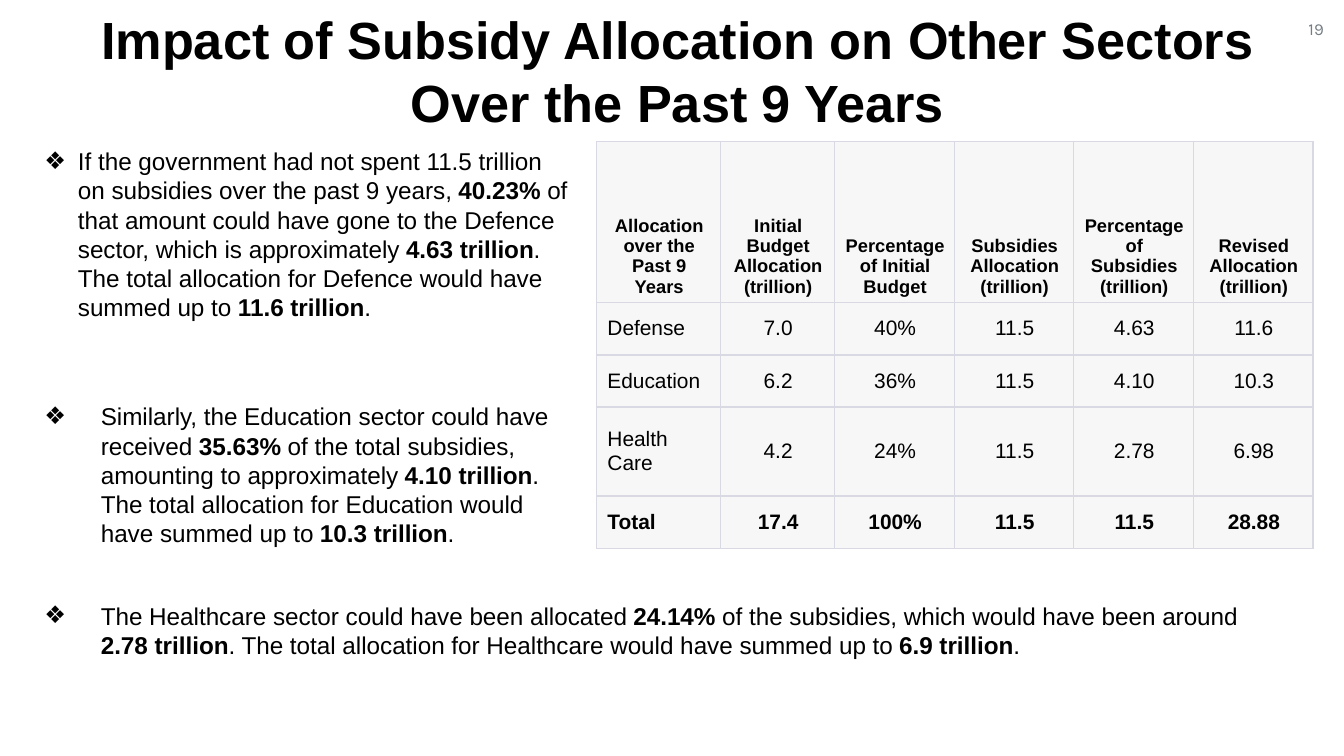
from pptx import Presentation
from pptx.dml.color import RGBColor
from pptx.enum.text import MSO_ANCHOR, MSO_AUTO_SIZE, PP_ALIGN
from pptx.oxml import parse_xml
from pptx.oxml.ns import nsdecls
from pptx.util import Inches, Pt

LEFT, CENTER, RIGHT = PP_ALIGN.LEFT, PP_ALIGN.CENTER, PP_ALIGN.RIGHT
TOP, MIDDLE, BOTTOM = MSO_ANCHOR.TOP, MSO_ANCHOR.MIDDLE, MSO_ANCHOR.BOTTOM
NO_AUTOFIT = MSO_AUTO_SIZE.NONE

THEME = {
    "ink": "000000", "page_number": "767E85", "cell": "F7F7F8", "grid": "D9D9E3",
    "font": "Arial", "page_font": "Karla",
    "title_size": 28, "body_size": 13, "header_size": 9.8, "cell_size": 11.2, "page_size": 9,
}


def add_text(paragraph, text, size, bold=False, font="font", color="ink"):
    run = paragraph.add_run()
    run.text = text
    formats = {"name": THEME[font], "size": Pt(THEME[size]), "bold": bold}
    for attribute, value in formats.items():
        setattr(run.font, attribute, value)
    run.font.color.rgb = RGBColor.from_string(THEME[color])


def add_bullet(paragraph, text, indent, space_before):
    """Fill a diamond-bulleted paragraph; every second part between asterisks is bold."""
    properties = paragraph._p.get_or_add_pPr()
    properties.set("marL", str(Inches(indent)))
    properties.set("indent", str(-Inches(indent)))
    for tag in (f'<a:buClr {nsdecls("a")}><a:srgbClr val="{THEME["ink"]}"/></a:buClr>',
                f'<a:buFont {nsdecls("a")} typeface="{THEME["font"]}"/>',
                f'<a:buChar {nsdecls("a")} char="❖"/>'):
        properties.append(parse_xml(tag))
    paragraph.alignment = LEFT
    paragraph.line_spacing = 1.0
    paragraph.space_before = Pt(space_before)
    for index, part in enumerate(text.split("*")):
        add_text(paragraph, part, "body_size", bold=index % 2 == 1)


prs = Presentation()
prs.slide_width, prs.slide_height = Inches(10), Inches(10 * 9 / 16)
slide = prs.slides.add_slide(prs.slide_layouts[3])
title, sector_points, healthcare_point = slide.placeholders
page_number = slide.shapes.add_textbox(0, 0, 0, 0)

# Text areas: left, top, width, height, anchor
areas = [
    (title, 0.23, 0, 9.62, 1.04, MIDDLE),
    (sector_points, 0.23, 1.04, 4.14, 3.11, TOP),
    (healthcare_point, 0.23, 4.42, 9.33, 0.54, TOP),
    (page_number, 9.25, 0.14, 0.6, 0.43, TOP),
]
for area, left, top, width, height, anchor in areas:
    box = {"left": left, "top": top, "width": width, "height": height}
    for attribute, value in box.items():
        setattr(area, attribute, Inches(value))
    frame = area.text_frame
    frame.word_wrap = True
    frame.auto_size = NO_AUTOFIT
    frame.vertical_anchor = anchor

heading = title.text_frame.paragraphs[0]
heading.alignment = CENTER
add_text(heading, "Impact of Subsidy Allocation on Other Sectors Over the Past 9 Years",
         "title_size", bold=True)

for side in ("left", "top", "right", "bottom"):
    setattr(page_number.text_frame, f"margin_{side}", 0)
number = page_number.text_frame.paragraphs[0]
number.alignment = RIGHT
add_text(number, "19", "page_size", font="page_font", color="page_number")

# Bulleted findings
defence = ("If the government had not spent 11.5 trillion on subsidies over the past 9 years, "
           "*40.23% *of that amount could have gone to the Defence sector, which is approximately "
           "*4.63 trillion*. The total allocation for Defence would have summed up to "
           "*11.6 trillion*.")
education = ("Similarly, the Education sector could have received *35.63% *of the total subsidies, "
             "amounting to approximately *4.10 trillion*. The total allocation for Education "
             "would have summed up to *10.3 trillion*.")
healthcare = ("The Healthcare sector could have been allocated *24.14% *of the subsidies, which "
              "would have been around *2.78 trillion*. The total allocation for Healthcare would "
              "have summed up to *6.9 trillion*.")
add_bullet(sector_points.text_frame.paragraphs[0], defence, 0.25, 0)
add_bullet(sector_points.text_frame.add_paragraph(), education, 0.42, 43)
add_bullet(healthcare_point.text_frame.paragraphs[0], healthcare, 0.42, 0)

# Allocation table
allocations = [
    ["Allocation over the Past 9 Years", "Initial Budget Allocation (trillion)",
     "Percentage of Initial Budget", "Subsidies Allocation (trillion)",
     "Percentage of Subsidies (trillion)", "Revised Allocation (trillion)"],
    ["Defense", "7.0", "40%", "11.5", "4.63", "11.6"],
    ["Education", "6.2", "36%", "11.5", "4.10", "10.3"],
    ["Health Care", "4.2", "24%", "11.5", "2.78", "6.98"],
    ["Total", "17.4", "100%", "11.5", "11.5", "28.88"],
]
column_widths = [0.92, 0.85] + [0.89] * 4
row_heights = [1.2, 0.39, 0.39, 0.66, 0.39]
last_row = len(allocations) - 1
table = slide.shapes.add_table(
    len(row_heights), len(column_widths), Inches(4.44), Inches(1.05),
    Inches(sum(column_widths)), Inches(sum(row_heights))).table
for column, width in zip(table.columns, column_widths):
    column.width = Inches(width)
for row, height in zip(table.rows, row_heights):
    row.height = Inches(height)

for r, values in enumerate(allocations):
    for c, value in enumerate(values):
        cell = table.cell(r, c)
        is_header = r == 0
        formats = {"margin_left": Inches(0.08), "margin_right": Inches(0.07),
                   "margin_top": Inches(0.04), "margin_bottom": Inches(0.04),
                   "vertical_anchor": BOTTOM if is_header else MIDDLE}
        for attribute, setting in formats.items():
            setattr(cell, attribute, setting)
        entry = cell.text_frame.paragraphs[0]
        entry.alignment = LEFT if c == 0 and not is_header else CENTER
        add_text(entry, value, "header_size" if is_header else "cell_size",
                 bold=r in (0, last_row))
        borders = {"lnL": 0.75, "lnR": 0.75, "lnT": 0.75 if is_header else 1,
                   "lnB": 0.75 if r == last_row else 1}
        for edge, weight in borders.items():
            cell._tc.get_or_add_tcPr().append(parse_xml(
                f'<a:{edge} {nsdecls("a")} w="{Pt(weight)}"><a:solidFill>'
                f'<a:srgbClr val="{THEME["grid"]}"/></a:solidFill></a:{edge}>'))
        cell.fill.solid()
        cell.fill.fore_color.rgb = RGBColor.from_string(THEME["cell"])

prs.save("out.pptx")
